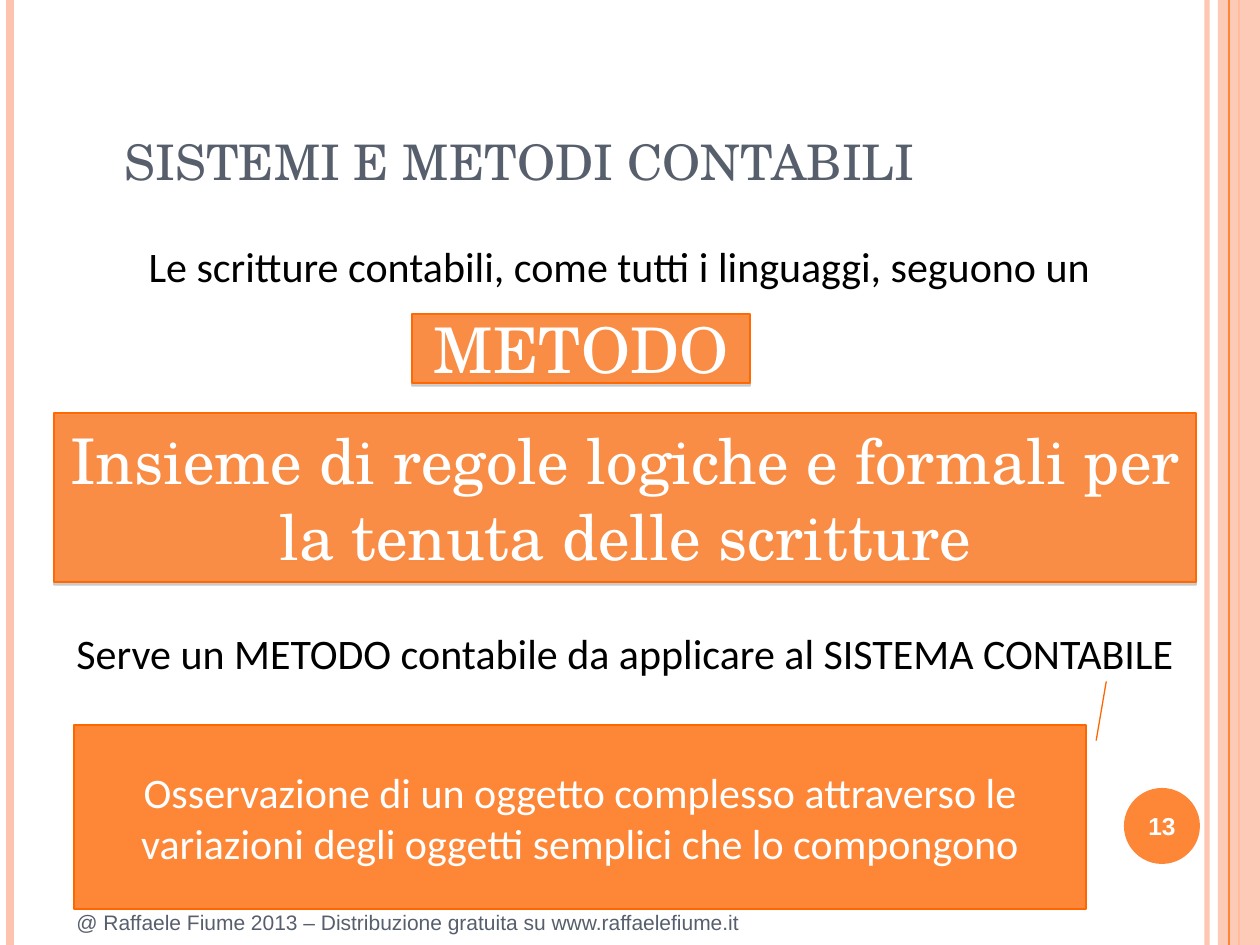
from dataclasses import dataclass
from typing import Optional

from lxml.etree import SubElement
from pptx import Presentation
from pptx.dml.color import RGBColor
from pptx.enum.shapes import MSO_CONNECTOR, MSO_SHAPE
from pptx.enum.text import MSO_ANCHOR as ANCHOR, PP_ALIGN as ALIGN
from pptx.oxml.ns import qn
from pptx.util import Emu, Pt

W, H = 1260, 945
COLORS = {
    "orange": "FE8637", "edge": "FF6903", "callout edge": "FF6600",
    "peach": "FEC3AE", "slate": "575F6D", "shadow": "808080",
    "white": "FFFFFF", "black": "000000",
}
SERIF, SANS, ARIAL = "TeX Gyre Schola", "Calibri", "Arial"


@dataclass
class Rule:
    x: int
    color: str
    width: float
    alpha: int = 100


@dataclass
class Style:
    font: str
    size: int
    color: str
    align: ALIGN = ALIGN.CENTER
    anchor: ANCHOR = ANCHOR.MIDDLE
    bold: bool = False


@dataclass
class Block:
    box: tuple[int, int, int, int]
    text: str
    style: Style


def px(n: int) -> Emu:
    return Emu(round(n * 914400 / 126))


def rgb(name: str) -> RGBColor:
    return RGBColor.from_string(COLORS[name])


def set_alpha(parent, percent: int) -> None:
    """Make the solid colour below parent translucent."""
    if percent < 100:
        clr = next(parent.iter(qn("a:srgbClr")))
        SubElement(clr, qn("a:alpha"), val=str(percent * 1000))


def add_rule(shapes, rule: Rule) -> None:
    x = px(rule.x)
    line = shapes.add_connector(MSO_CONNECTOR.STRAIGHT, x, 0, x, px(H))
    line.line.color.rgb = rgb(rule.color)
    line.line.width = Pt(rule.width)
    sp_pr = line._element.spPr
    set_alpha(sp_pr, rule.alpha)
    SubElement(sp_pr, qn("a:effectLst"))


def add_shape(shapes, kind: MSO_SHAPE, box, alpha: int = 100, fill: str = "orange",
              edge: Optional[str] = None, width: float = 1):
    sp = shapes.add_shape(kind, *map(px, box))
    sp.shadow.inherit = False
    sp.fill.solid()
    sp.fill.fore_color.rgb = rgb(fill)
    set_alpha(sp._element.spPr, alpha)
    if edge:
        sp.line.color.rgb = rgb(edge)
        sp.line.width = Pt(width)
    else:
        sp.line.fill.background()
    return sp


def add_drop_shadow(sp) -> None:
    effects = sp._element.spPr.find(qn("a:effectLst"))
    shadow = SubElement(effects, qn("a:outerShdw"), blurRad="0", dist=str(Pt(1.6)),
                        dir="5400000", rotWithShape="0")
    clr = SubElement(shadow, qn("a:srgbClr"), val=COLORS["shadow"])
    SubElement(clr, qn("a:alpha"), val="42000")


def write(sp, text: str, style: Style) -> None:
    tf = sp.text_frame
    tf.word_wrap = True
    tf.vertical_anchor = style.anchor
    p = tf.paragraphs[0]
    p.text = text
    p.alignment = style.align
    p.font.name, p.font.size, p.font.bold = style.font, Pt(style.size), style.bold
    p.font.color.rgb = rgb(style.color)


def add_text(shapes, block: Block) -> None:
    write(shapes.add_textbox(*map(px, block.box)), block.text, block.style)


BODY = Style(SANS, 24, "black", anchor=ANCHOR.TOP)
BANNER = Style(SERIF, 36, "white")
TITLE = Style(SERIF, 28, "slate", ALIGN.LEFT, ANCHOR.BOTTOM)
FOOTER = Style(ARIAL, 12, "slate", ALIGN.LEFT)
NUMBER = Style(ARIAL, 14, "white", bold=True)
CALLOUT = Style(SANS, 24, "white")

RULES_BELOW = [Rule(1207, "peach", 3, 93), Rule(10, "peach", 4.5), Rule(1239, "orange", 1.5)]
RULE_ABOVE = Rule(1229, "orange", 0.75)
TEXTS = [
    Block((64, 900, 1032, 45),
          "@ Raffaele Fiume 2013 – Distribuzione gratuita su www.raffaelefiume.it", FOOTER),
    Block((1120, 790, 84, 72), "13", NUMBER),
    Block((64, 234, 1111, 63),
          "Le scritture contabili, come tutti i linguaggi, seguono un", BODY),
    Block((54, 621, 1142, 113),
          "Serve un METODO contabile da applicare al SISTEMA CONTABILE", BODY),
]
BANNERS = [
    Block((412, 314, 338, 69), "METODO", BANNER),
    Block((54, 413, 1142, 169),
          "Insieme di regole logiche e formali per la tenuta delle scritture", BANNER),
]


def main() -> None:
    prs = Presentation()
    prs.slide_width, prs.slide_height = px(W), px(H)
    slide = prs.slides.add_slide(prs.slide_layouts[5])
    shapes = slide.shapes

    # Side rules, right band and number disc
    for rule in RULES_BELOW:
        add_rule(shapes, rule)
    add_shape(shapes, MSO_SHAPE.RECTANGLE, (1218, 0, 42, H), alpha=87, fill="peach")
    add_rule(shapes, RULE_ABOVE)
    add_shape(shapes, MSO_SHAPE.OVAL, (1124, 788, 76, 76))

    # Title
    title = shapes.title
    title.left, title.top, title.width, title.height = map(px, (112, 102, 1103, 95))
    write(title, "SISTEMI E METODI CONTABILI", TITLE)

    # Plain texts and orange banners
    for block in TEXTS:
        add_text(shapes, block)
    for block in BANNERS:
        sp = add_shape(shapes, MSO_SHAPE.RECTANGLE, block.box, alpha=90, edge="edge")
        add_drop_shadow(sp)
        write(sp, block.text, block.style)

    # Callout pointing at the accounting system
    callout = add_shape(shapes, MSO_SHAPE.LINE_CALLOUT_1, (74, 725, 1012, 184),
                        edge="callout edge", width=0.75)
    for i, value in enumerate((0.085, 1.01, -0.237, 1.02)):
        callout.adjustments[i] = value
    write(callout, "Osservazione di un oggetto complesso attraverso le variazioni "
          "degli oggetti semplici che lo compongono", CALLOUT)

    prs.save("out.pptx")


if __name__ == "__main__":
    main()
